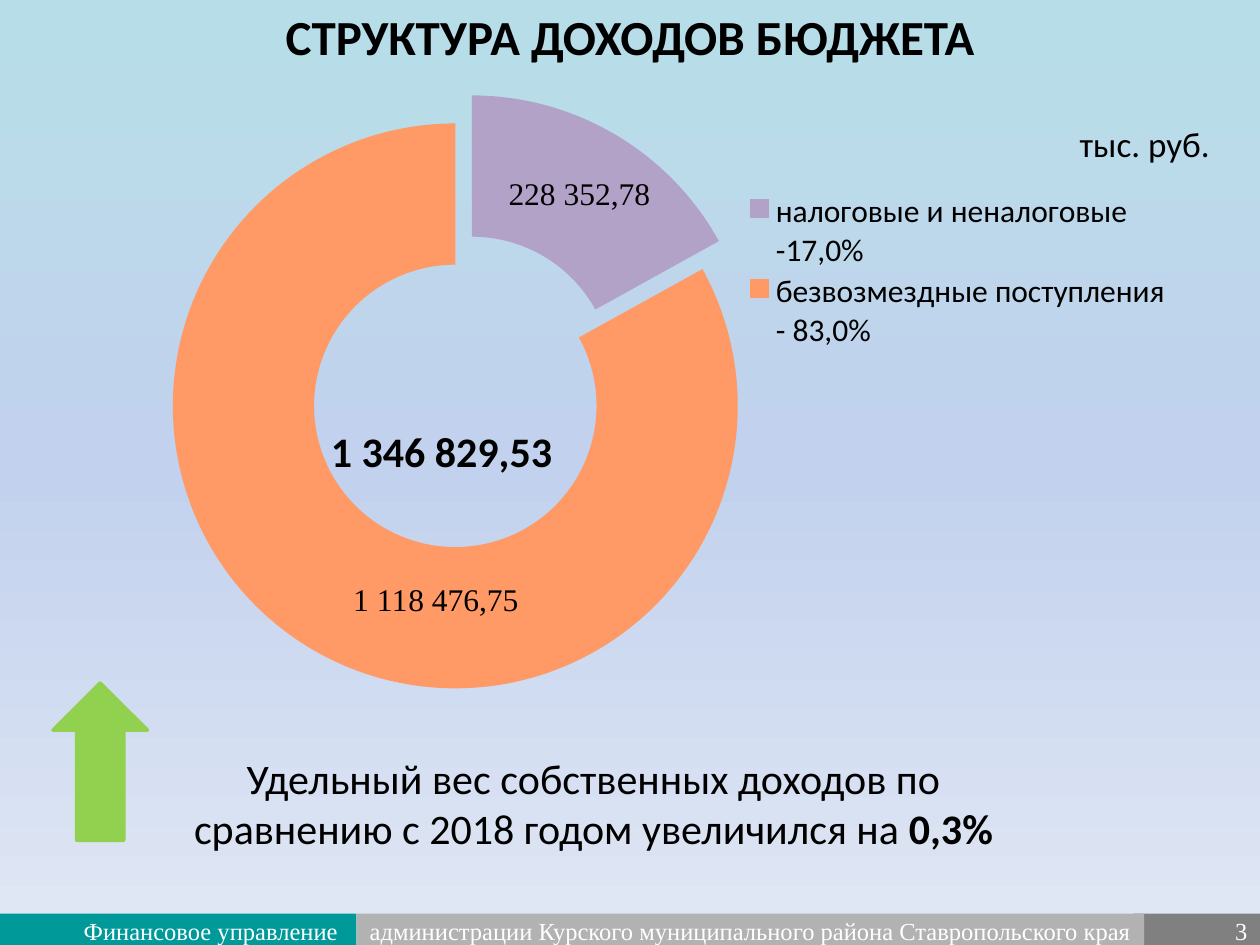
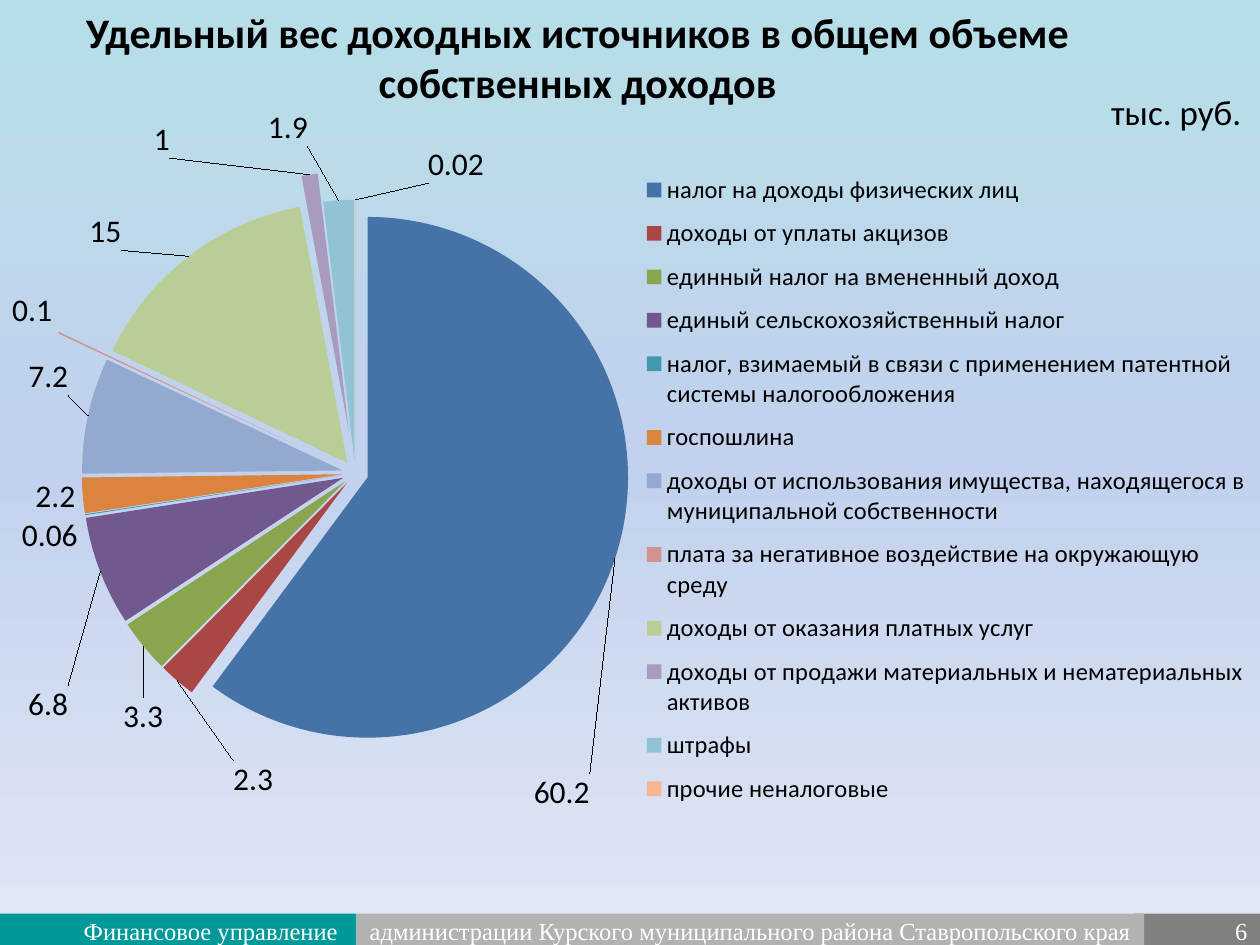
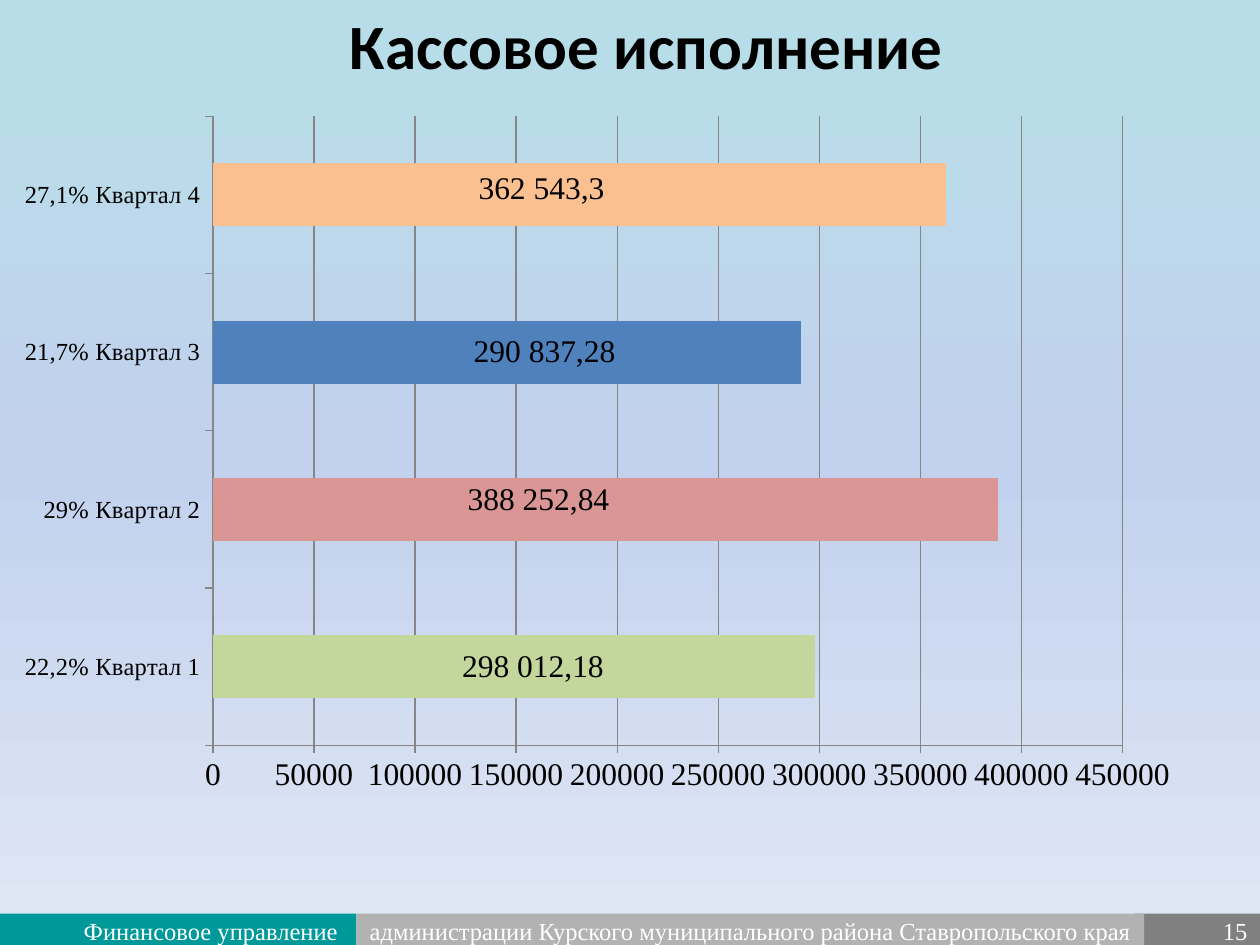
import copy

import lxml.etree
import pptx
import pptx.chart.data
import pptx.dml.color
import pptx.enum.chart
import pptx.enum.shapes
import pptx.enum.text
import pptx.oxml
import pptx.oxml.ns
import pptx.util

Inches = pptx.util.Inches
Pt = pptx.util.Pt
RGBColor = pptx.dml.color.RGBColor
ChartType = pptx.enum.chart.XL_CHART_TYPE
Align = pptx.enum.text.PP_ALIGN
Anchor = pptx.enum.text.MSO_ANCHOR
Shape = pptx.enum.shapes.MSO_SHAPE

BLACK = RGBColor(0x00, 0x00, 0x00)
WHITE = RGBColor(0xFF, 0xFF, 0xFF)
TEAL = RGBColor(0x00, 0x99, 0x99)
SILVER = RGBColor(0xB2, 0xB2, 0xB2)
GRAY = RGBColor(0x80, 0x80, 0x80)
AXIS_GRAY = RGBColor(0x86, 0x86, 0x86)
GREEN = RGBColor(0x92, 0xD0, 0x50)
SKY = RGBColor(0xB7, 0xDE, 0xE8)
PERIWINKLE = RGBColor(0xC2, 0xD1, 0xED)
MIST = RGBColor(0xE1, 0xE8, 0xF5)
INCOME_COLORS = [RGBColor(0xB3, 0xA2, 0xC7), RGBColor(0xFF, 0x99, 0x66)]
SOURCE_COLORS = [
    RGBColor(0x45, 0x72, 0xA7), RGBColor(0xAA, 0x46, 0x43), RGBColor(0x89, 0xA5, 0x4E),
    RGBColor(0x71, 0x58, 0x8F), RGBColor(0x41, 0x98, 0xAF), RGBColor(0xDB, 0x84, 0x3D),
    RGBColor(0x93, 0xA9, 0xCF), RGBColor(0xD1, 0x93, 0x92), RGBColor(0xB9, 0xCD, 0x96),
    RGBColor(0xA9, 0x9B, 0xBD), RGBColor(0x91, 0xC3, 0xD5), RGBColor(0xF9, 0xB5, 0x90),
]
QUARTER_COLORS = [
    RGBColor(0xC3, 0xD6, 0x9B), RGBColor(0xD9, 0x96, 0x94),
    RGBColor(0x4F, 0x81, 0xBD), RGBColor(0xFA, 0xC0, 0x90),
]

SANS = "Calibri"
SERIF = "Times New Roman"
FOOTER = {"name": SERIF, "size": Pt(14)}
UNIT = {"name": SANS, "size": Pt(20)}
NOTE = {"name": SANS, "size": Pt(24)}
STRONG = {"name": SANS, "size": Pt(24), "bold": True}
VALUE = {"name": SERIF, "size": Pt(18), "bold": False}


def write(frame, pieces, alignment=Align.CENTER, color=BLACK):
    frame.word_wrap = True
    para = frame.paragraphs[0]
    para.alignment = alignment
    for text, formats in pieces:
        span = para.add_run()
        span.text = text
        span.font.color.rgb = color
        for key, value in formats.items():
            setattr(span.font, key, value)


def arrange(owner, index, settings):
    for old in owner.findall(pptx.oxml.ns.qn("c:layout")):
        owner.remove(old)
    layout = lxml.etree.Element(pptx.oxml.ns.qn("c:layout"))
    manual = lxml.etree.SubElement(layout, pptx.oxml.ns.qn("c:manualLayout"))
    for key, value in settings.items():
        lxml.etree.SubElement(manual, pptx.oxml.ns.qn("c:" + key)).set("val", str(value))
    owner.insert(index, layout)


pages = [
    {
        "number": "3",
        "title": "СТРУКТУРА ДОХОДОВ БЮДЖЕТА",
        "title_area": (0, 0, 10, 0.57),
        "title_size": 28,
        "kind": ChartType.DOUGHNUT,
        "chart_area": (0, 0.5, 10, 5),
        "font": SERIF,
        "plot": (0.089, 0, 0.571, 1),
        "legend": (0.595, 0.2, 0.33, 0.26),
        "legend_size": 18,
        "colors": INCOME_COLORS,
        "points": [
            ("налоговые и неналоговые -17,0%", 228352.78),
            ("безвозмездные поступления - 83,0%", 1118476.75),
        ],
        "captions": ["228 352,78", "1 118 476,75"],
        "shifts": {1: (0.07, 0.02)},
        "explosion": 23,
        "point_explosions": {0: 0},
        "texts": [
            ((1.17, 5.92, 7.08, 0.91), [
                ("Удельный вес собственных доходов по сравнению с 2018 годом увеличился на ", NOTE),
                ("0,3%", STRONG),
            ]),
            ((8.42, 0.92, 1.33, 0.44), [("тыс. руб.", UNIT)]),
            ((2.42, 3.33, 2.17, 0.5), [("1 346 829,53", STRONG)]),
        ],
    },
    {
        "number": "6",
        "title": "Удельный вес доходных источников в общем объеме собственных доходов",
        "title_area": (0, 0, 9.17, 0.91),
        "title_size": 24,
        "kind": ChartType.PIE,
        "chart_area": (0, 0, 10, 7.33),
        "font": SANS,
        "plot": (0.065, 0.191, 0.434, 0.643),
        "legend": (0.517, 0.175, 0.48, 0.71),
        "legend_size": 14,
        "colors": SOURCE_COLORS,
        "points": [
            ("налог на доходы физических лиц", 60.2),
            ("доходы от уплаты акцизов", 2.3),
            ("единный налог на вмененный доход", 3.3),
            ("единый сельскохозяйственный налог", 6.8),
            ("налог, взимаемый в связи с применением патентной системы налогообложения", 0.06),
            ("госпошлина", 2.2),
            ("доходы от использования имущества, находящегося в муниципальной собственности", 7.2),
            ("плата за негативное воздействие на окружающую среду", 0.1),
            ("доходы от оказания платных услуг", 15),
            ("доходы от продажи материальных и нематериальных активов", 1),
            ("штрафы", 1.9),
            ("прочие неналоговые", 0.02),
        ],
        "captions": [],
        "shifts": {
            0: (-0.07, 0.23), 1: (0.08, 0.08), 2: (0.02, 0.05), 3: (-0.02, 0.12),
            6: (-0.01, -0.02), 8: (-0.05, 0), 9: (-0.11, -0.01),
            10: (-0.04, -0.05), 11: (0.08, -0.01),
        },
        "explosion": 5,
        "point_explosions": {7: 26, 9: 16},
        "texts": [((8.67, 0.67, 1.33, 0.44), [("тыс. руб.", UNIT)])],
    },
    {
        "number": "15",
        "title": "Кассовое исполнение",
        "title_area": (0.92, 0, 8.42, 0.71),
        "title_size": 36,
        "kind": ChartType.BAR_STACKED,
        "chart_area": (0, 0, 10, 7.5),
        "font": SERIF,
        "plot": (0.169, 0.123, 0.722, 0.666),
        "legend": None,
        "colors": QUARTER_COLORS,
        "points": [
            ("22,2% Квартал 1", 298012.18),
            ("29% Квартал 2", 388252.84),
            ("21,7% Квартал 3", 290837.28),
            ("27,1% Квартал 4", 362543.3),
        ],
        "captions": ["298 012,18", "388 252,84", "290 837,28", "362 543,3"],
        "shifts": {0: (0.015, 0), 1: (-0.053, -0.01), 2: (0.03, 0), 3: (-0.03, -0.006)},
        "explosion": None,
        "point_explosions": {},
        "texts": [],
    },
]

deck = pptx.Presentation()
deck.slide_width = Inches(10)
deck.slide_height = Inches(7.5)

backdrop = deck.slide_master.background.fill
backdrop.gradient()
backdrop.gradient_angle = 270
first_stop = deck.slide_master.element.xpath("./p:cSld/p:bg//a:gs")[0]
first_stop.addnext(copy.deepcopy(first_stop))
for stop, position, color in zip(backdrop.gradient_stops, (0, 0.5, 1), (SKY, PERIWINKLE, MIST)):
    stop.position = position
    stop.color.rgb = color

for content in pages:
    page = deck.slides.add_slide(deck.slide_layouts[5])
    title = page.shapes.title
    title.left, title.top, title.width, title.height = map(Inches, content["title_area"])
    title.text_frame.auto_size = pptx.enum.text.MSO_AUTO_SIZE.NONE
    title.text_frame.vertical_anchor = Anchor.TOP
    title_format = {"name": SANS, "size": Pt(content["title_size"]), "bold": True}
    write(title.text_frame, [(content["title"], title_format)])

    data = pptx.chart.data.CategoryChartData()
    data.categories = [name for name, amount in content["points"]]
    data.add_series("Series 1", [amount for name, amount in content["points"]])
    chart = page.shapes.add_chart(
        content["kind"], *map(Inches, content["chart_area"]), data
    ).chart
    chart.has_title = False
    chart.font.name = content["font"]
    chart.font.size = Pt(18)
    chart.font.color.rgb = BLACK
    plot = chart.plots[0]
    plot.vary_by_categories = content["kind"] != ChartType.BAR_STACKED
    edges = {"xMode": "edge", "yMode": "edge"}
    plot_box = dict(zip("xywh", content["plot"]))
    arrange(chart.element.xpath(".//c:plotArea")[0], 0, {"layoutTarget": "inner", **edges, **plot_box})

    chart.has_legend = content["legend"] is not None
    if chart.has_legend:
        chart.legend.position = pptx.enum.chart.XL_LEGEND_POSITION.RIGHT
        chart.legend.include_in_layout = False
        chart.legend.font.name = SANS
        chart.legend.font.size = Pt(content["legend_size"])
        chart.legend.font.color.rgb = BLACK
        arrange(chart.element.xpath(".//c:legend")[0], 1, {**edges, **dict(zip("xywh", content["legend"]))})

    series = plot.series[0]
    labels = series.data_labels
    labels.show_value = True
    labels.font.name = content["font"]
    labels.font.size = Pt(18)
    labels.font.color.rgb = BLACK
    if content["kind"] == ChartType.PIE:
        labels.position = pptx.enum.chart.XL_LABEL_POSITION.OUTSIDE_END
    for index, color in enumerate(content["colors"]):
        fill = series.points[index].format.fill
        fill.solid()
        fill.fore_color.rgb = color
    for index, caption in enumerate(content["captions"]):
        write(series.points[index].data_label.text_frame, [(caption, VALUE)])
    for index, shift in content["shifts"].items():
        if content["kind"] == ChartType.PIE:
            series.points[index].data_label.position = pptx.enum.chart.XL_LABEL_POSITION.OUTSIDE_END
        label = chart.element.xpath(f".//c:dLbl[c:idx/@val='{index}']")[0]
        arrange(label, 1, dict(zip("xy", shift)))

    explosions = [
        (chart.element.xpath(f".//c:dPt[c:idx/@val='{index}']/c:spPr")[0], amount)
        for index, amount in content["point_explosions"].items()
    ]
    if content["explosion"]:
        explosions.append((chart.element.xpath(".//c:dPt")[0], content["explosion"]))
    for follower, amount in explosions:
        explosion = lxml.etree.Element(pptx.oxml.ns.qn("c:explosion"))
        explosion.set("val", str(amount))
        follower.addprevious(explosion)

    if content["kind"] == ChartType.BAR_STACKED:
        plot.gap_width = 150
        plot.overlap = 100
        for axis, size in ((chart.category_axis, 14), (chart.value_axis, 18)):
            axis.tick_labels.font.name = SERIF
            axis.tick_labels.font.size = Pt(size)
            axis.tick_labels.font.color.rgb = BLACK
            axis.major_tick_mark = pptx.enum.chart.XL_TICK_MARK.OUTSIDE
            axis.format.line.color.rgb = AXIS_GRAY
        chart.value_axis.minimum_scale = 0
        chart.value_axis.maximum_scale = 450000
        chart.value_axis.major_unit = 50000
        chart.value_axis.major_gridlines.format.line.color.rgb = AXIS_GRAY

    for area, pieces in content["texts"]:
        box = page.shapes.add_textbox(*map(Inches, area))
        write(box.text_frame, pieces)

    if content["kind"] == ChartType.DOUGHNUT:
        arrow = page.shapes.add_shape(
            Shape.UP_ARROW, Inches(0.42), Inches(5.42), Inches(0.75), Inches(1.25)
        )
        arrow.shadow.inherit = False
        arrow.fill.solid()
        arrow.fill.fore_color.rgb = GREEN
        arrow.line.color.rgb = GREEN
        arrow.line.width = Pt(2)

    for left, width, color, alignment, text in (
        (9, 1, GRAY, Align.RIGHT, content["number"]),
        (0, 2.83, TEAL, Align.RIGHT, "Финансовое управление "),
        (2.83, 6.25, SILVER, Align.CENTER,
         "администрации Курского муниципального района Ставропольского края "),
    ):
        band = page.shapes.add_shape(
            Shape.RECTANGLE, Inches(left), Inches(7.25), Inches(width), Inches(0.28)
        )
        band.shadow.inherit = False
        band.fill.solid()
        band.fill.fore_color.rgb = color
        band.line.fill.background()
        band.text_frame.vertical_anchor = Anchor.MIDDLE
        write(band.text_frame, [(text, FOOTER)], alignment, WHITE)

deck.save("out.pptx")
